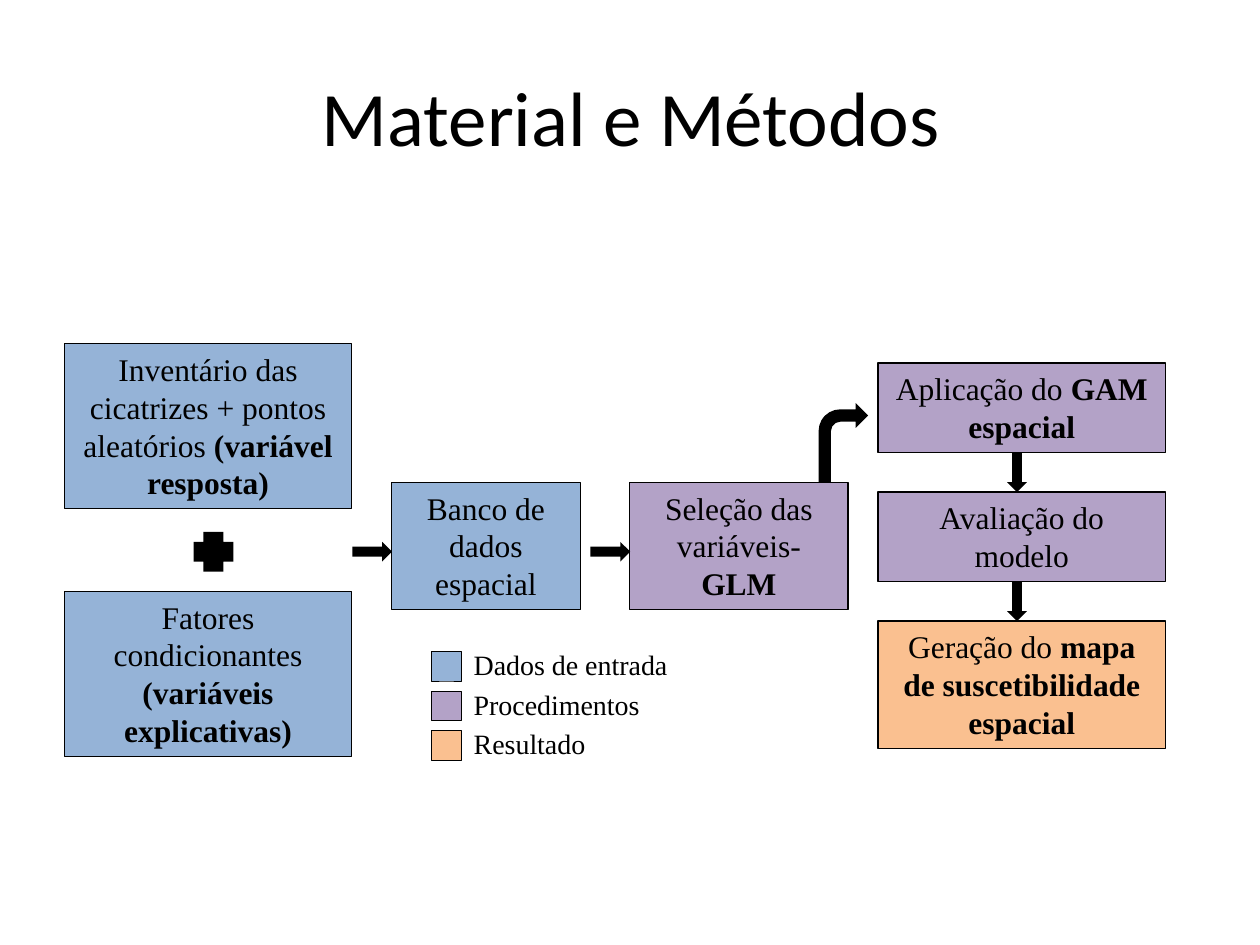
from dataclasses import dataclass

import pptx
import pptx.dml.color
import pptx.enum.shapes
import pptx.enum.text
import pptx.util

Pt = pptx.util.Pt
SHAPE = pptx.enum.shapes.MSO_SHAPE
ALIGN = pptx.enum.text.PP_ALIGN
ANCHOR = pptx.enum.text.MSO_ANCHOR

COLORS = {
    "input": "95B3D7",
    "procedure": "B3A2C7",
    "result": "FAC090",
    "black": "000000",
}
SERIF = "Times New Roman"
HEIGHTS = {2: 51, 3: 72.7, 4: 94.3}  # box height by number of text lines
GAP = 22.7  # length of a straight arrow
WIDE = 164.2
RIGHT_X = 501.8


@dataclass
class Box:
    x: float
    y: float
    w: float
    lines: int
    color: str
    text: str
    bold: str = ""


@dataclass
class Sign:
    kind: pptx.enum.shapes.MSO_SHAPE
    x: float
    y: float
    w: float
    h: float


@dataclass
class Key:
    color: str
    label: str
    w: float


def rgb(name: str) -> pptx.dml.color.RGBColor:
    return pptx.dml.color.RGBColor.from_string(COLORS[name])


def write(sp, text: str, *, bold: str = "", size: float = 18, font: str = SERIF,
          align=ALIGN.CENTER, anchor=ANCHOR.TOP) -> None:
    """Fill a shape with a regular run and an optional bold run."""
    tf = sp.text_frame
    tf.word_wrap = True
    tf.vertical_anchor = anchor
    p = tf.paragraphs[0]
    p.alignment = align
    for part, is_bold in ((text, False), (bold, True)):
        if part:
            r = p.add_run()
            r.text = part
            r.font.name = font
            r.font.size = Pt(size)
            r.font.bold = is_bold
            r.font.color.rgb = rgb("black")


def draw_shape(s, kind, x: float, y: float, w: float, h: float,
               color: str, line: float = 0):
    sp = s.shapes.add_shape(kind, Pt(x), Pt(y), Pt(w), Pt(h))
    sp.shadow.inherit = False
    sp.fill.solid()
    sp.fill.fore_color.rgb = rgb(color)
    if line:
        sp.line.color.rgb = rgb("black")
        sp.line.width = Pt(line)
    else:
        sp.line.fill.background()
    return sp


def draw_box(s, box: Box) -> None:
    sp = draw_shape(s, SHAPE.RECTANGLE, box.x, box.y, box.w,
                    HEIGHTS[box.lines], box.color, line=0.75)
    write(sp, box.text, bold=box.bold)


def draw_key(s, key: Key, y: float) -> None:
    draw_shape(s, SHAPE.RECTANGLE, 246.6, y, 17, 17, key.color, line=0.5)
    sp = s.shapes.add_textbox(Pt(263.6), Pt(y - 5.7), Pt(key.w), Pt(26.6))
    write(sp, key.label, size=16, align=ALIGN.LEFT)


def main() -> None:
    prs = pptx.Presentation()
    prs.slide_width, prs.slide_height = Pt(720), Pt(540)
    s = prs.slides.add_slide(prs.slide_layouts[6])

    # Title
    title = s.shapes.add_textbox(Pt(36.7), Pt(20.9), Pt(648), Pt(90))
    write(title, "Material e Métodos", size=44, font="Calibri",
          anchor=ANCHOR.MIDDLE)

    # Input data, database and variable selection
    for box in (
        Box(36.8, 196.4, WIDE, 4, "input",
            "Inventário das cicatrizes + pontos aleatórios ", "(variável resposta)"),
        Box(36.8, 337.9, WIDE, 4, "input",
            "Fatores condicionantes ", "(variáveis explicativas)"),
        Box(223.7, 275.7, 108, 3, "input", "Banco de dados espacial"),
        Box(359.8, 275.7, 124.9, 3, "procedure", "Seleção das variáveis- ", "GLM"),
    ):
        draw_box(s, box)

    # Right column, with an arrow between each pair of boxes
    y = 207.5
    for lines, color, text, bold in (
        (2, "procedure", "Aplicação do ", "GAM espacial"),
        (2, "procedure", "Avaliação do modelo", ""),
        (3, "result", "Geração do ", "mapa de suscetibilidade espacial"),
    ):
        draw_box(s, Box(RIGHT_X, y, WIDE, lines, color, text, bold))
        y += HEIGHTS[lines]
        if color != "result":
            draw_shape(s, SHAPE.DOWN_ARROW, 575.5, y, 11.3, GAP, "black")
            y += GAP

    # Plus sign and arrows of the flow
    for sign in (
        Sign(SHAPE.CROSS, 110.6, 304, GAP, GAP),
        Sign(SHAPE.RIGHT_ARROW, 201.3, 309.6, GAP, 11.3),
        Sign(SHAPE.RIGHT_ARROW, 337.4, 309.6, GAP, 11.3),
        Sign(SHAPE.BENT_ARROW, 467.8, 230.4, 28.3, 45.3),
    ):
        draw_shape(s, sign.kind, sign.x, sign.y, sign.w, sign.h, "black")

    # Legend
    keys = (
        Key("input", "Dados de entrada", 136),
        Key("procedure", "Procedimentos", 124.6),
        Key("result", "Resultado", 85),
    )
    for i, key in enumerate(keys):
        draw_key(s, key, 372.2 + i * GAP)

    prs.save("out.pptx")


if __name__ == "__main__":
    main()
